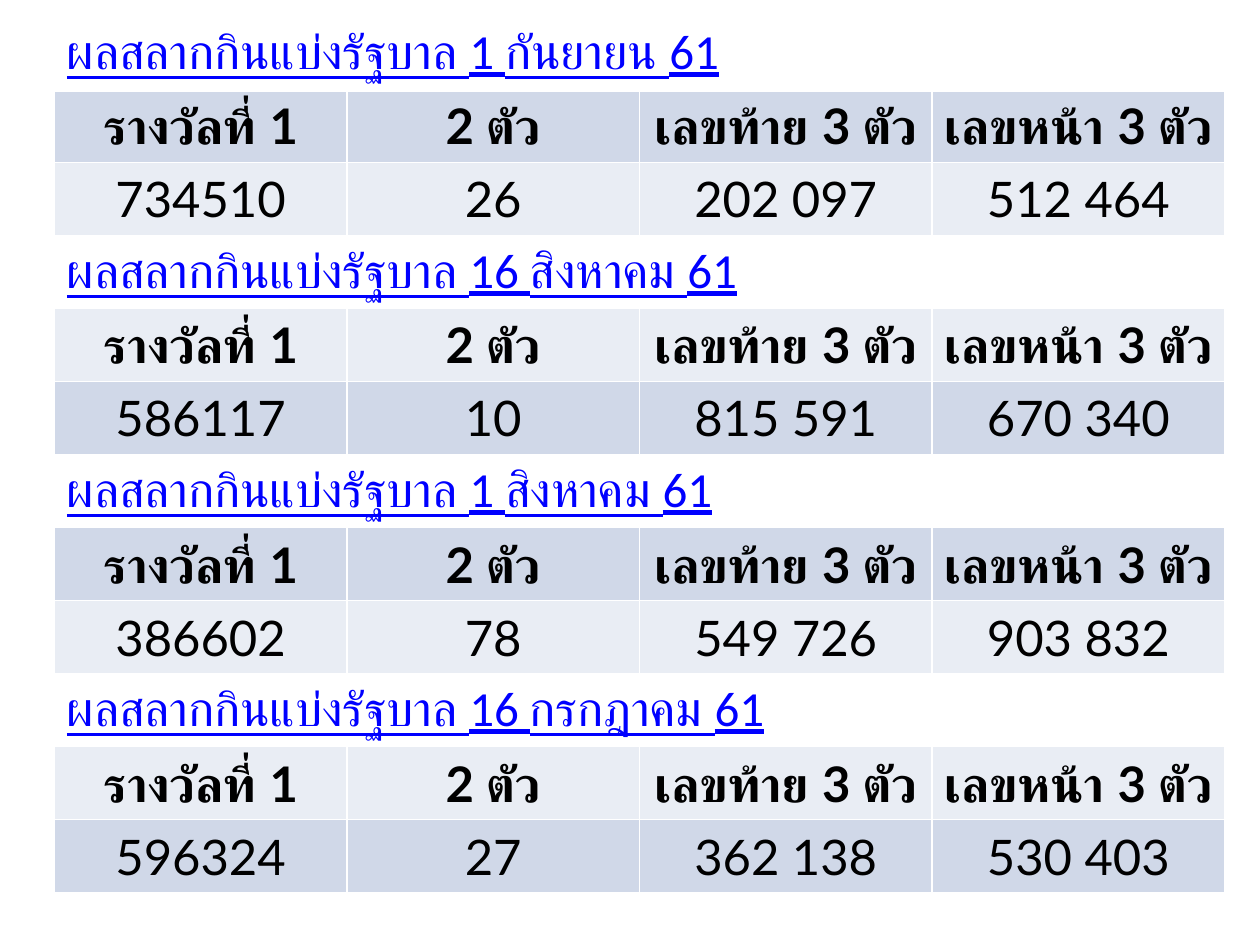
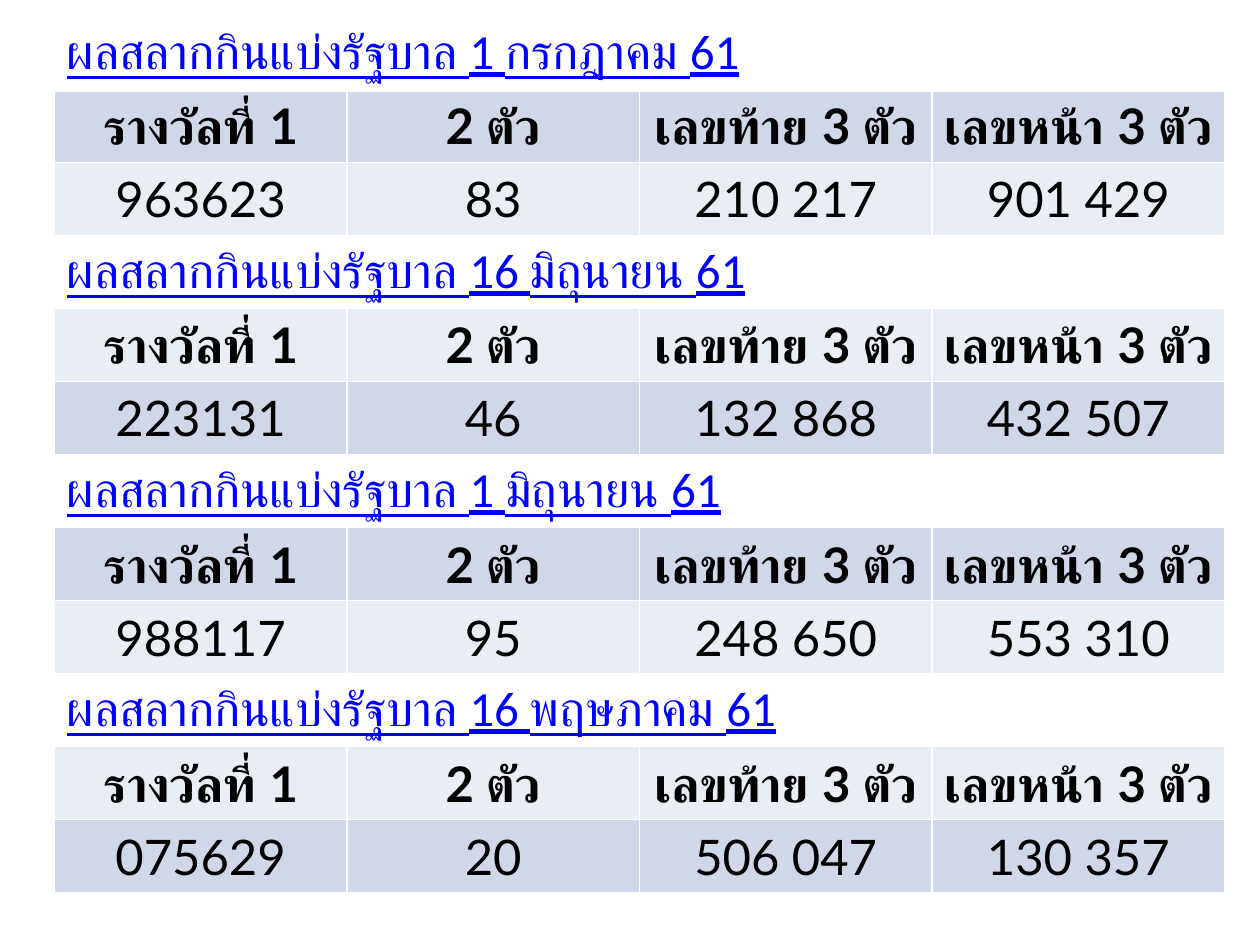
"""Build two slides of lottery results, four draws in each table."""
import pptx
import pptx.dml.color
import pptx.enum.text
import pptx.oxml.ns
import pptx.util
from lxml import etree

Pt = pptx.util.Pt
RGB = pptx.dml.color.RGBColor.from_string
ALIGN = pptx.enum.text.PP_ALIGN
MID = pptx.enum.text.MSO_ANCHOR.MIDDLE
qn = pptx.oxml.ns.qn

HEADS = ["รางวัลที่ 1", "2 ตัว", "เลขท้าย 3 ตัว", "เลขหน้า 3 ตัว"]
TITLE = "ผลสลากกินแบ่งรัฐบาล"
DRAWS = [
    [
        ("1 กันยายน 61", ["734510", "26", "202 097", "512 464"]),
        ("16 สิงหาคม 61", ["586117", "10", "815 591", "670 340"]),
        ("1 สิงหาคม 61", ["386602", "78", "549 726", "903 832"]),
        ("16 กรกฎาคม 61", ["596324", "27", "362 138", "530 403"]),
    ],
    [
        ("1 กรกฎาคม 61", ["963623", "83", "210 217", "901 429"]),
        ("16 มิถุนายน 61", ["223131", "46", "132 868", "432 507"]),
        ("1 มิถุนายน 61", ["988117", "95", "248 650", "553 310"]),
        ("16 พฤษภาคม 61", ["075629", "20", "506 047", "130 357"]),
    ],
]


class Deck:
    """Hold the style and the current slide."""

    hues = {"link": "0000FF", "text": "000000", "line": "FFFFFF",
            "dark": "D0D8E8", "light": "E9EDF4"}
    size = Pt(28)
    left, top = Pt(31), Pt(9.4)
    wide, high = Pt(167.2), Pt(41.75)

    def __init__(self):
        """Open an empty deck."""
        self.prs = pptx.Presentation()
        self.prs.slide_width, self.prs.slide_height = Pt(720), Pt(540)
        self.slide = None

    def page(self):
        """Start a blank slide."""
        self.slide = self.prs.slides.add_slide(self.prs.slide_layouts[6])

    def edge(self, cell, **widths):
        """Draw the four borders of a cell."""
        props = cell._tc.get_or_add_tcPr()
        for side in "LRTB":
            width = Pt(widths.get(side, 1))
            line = etree.SubElement(props, qn(f"a:ln{side}"), w=str(width))
            fill = etree.SubElement(line, qn("a:solidFill"))
            etree.SubElement(fill, qn("a:srgbClr"), val=self.hues["line"])

    def label(self, cell, text, font, hue, bold=False, link=False):
        """Add one styled run to a cell."""
        cell.vertical_anchor = MID
        run = cell.text_frame.paragraphs[0].add_run()
        run.text = text
        run.font.name, run.font.size = font, self.size
        run.font.bold, run.font.underline = bold, link
        run.font.color.rgb = RGB(self.hues[hue])

    def title(self, cells, date, rule):
        """Fill the merged row that names a draw."""
        for cell in cells:
            self.edge(cell, B=rule)
            cell.fill.background()
        cells[0].merge(cells[-1])
        self.label(cells[0], f"{TITLE} {date}", "Calibri", "link", link=True)

    def row(self, cells, texts, band, bold=False, rule=1):
        """Fill a row of centred cells."""
        for cell, text in zip(cells, texts):
            self.edge(cell, T=rule)
            cell.fill.solid()
            cell.fill.fore_color.rgb = RGB(self.hues[band])
            cell.margin_left = cell.margin_right = Pt(2.25)
            self.label(cell, text, "Lato", "text", bold=bold)
            cell.text_frame.paragraphs[0].alignment = ALIGN.CENTER

    def table(self, draws):
        """Add a table with three rows for each draw."""
        count, cols = 3 * len(draws), len(HEADS)
        grid = self.slide.shapes.add_table(
            count, cols, self.left, self.top,
            cols * self.wide, count * self.high).table
        grid.first_row = grid.horz_banding = False
        for col in grid.columns:
            col.width = self.wide
        for row in grid.rows:
            row.height = self.high
        rows = [list(row.cells) for row in grid.rows]
        for i, (date, wins) in enumerate(draws):
            name, head, body = rows[3 * i:3 * i + 3]
            bands = ("light", "dark") if i % 2 else ("dark", "light")
            rule = 1 if i else 3
            self.title(name, date, rule)
            self.row(head, HEADS, bands[0], bold=True, rule=rule)
            self.row(body, wins, bands[1])


def main():
    """Build and save the deck."""
    deck = Deck()
    for draws in DRAWS:
        deck.page()
        deck.table(draws)
    deck.prs.save("out.pptx")


if __name__ == "__main__":
    main()
